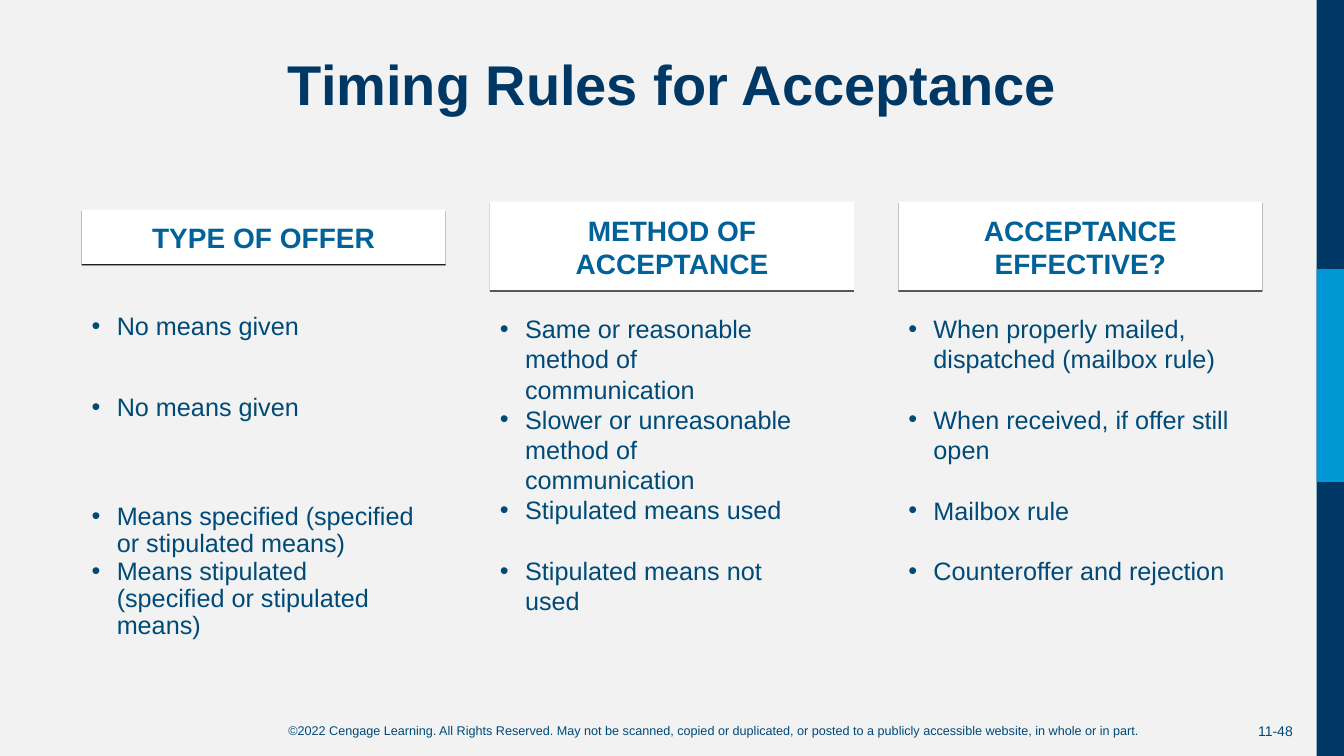
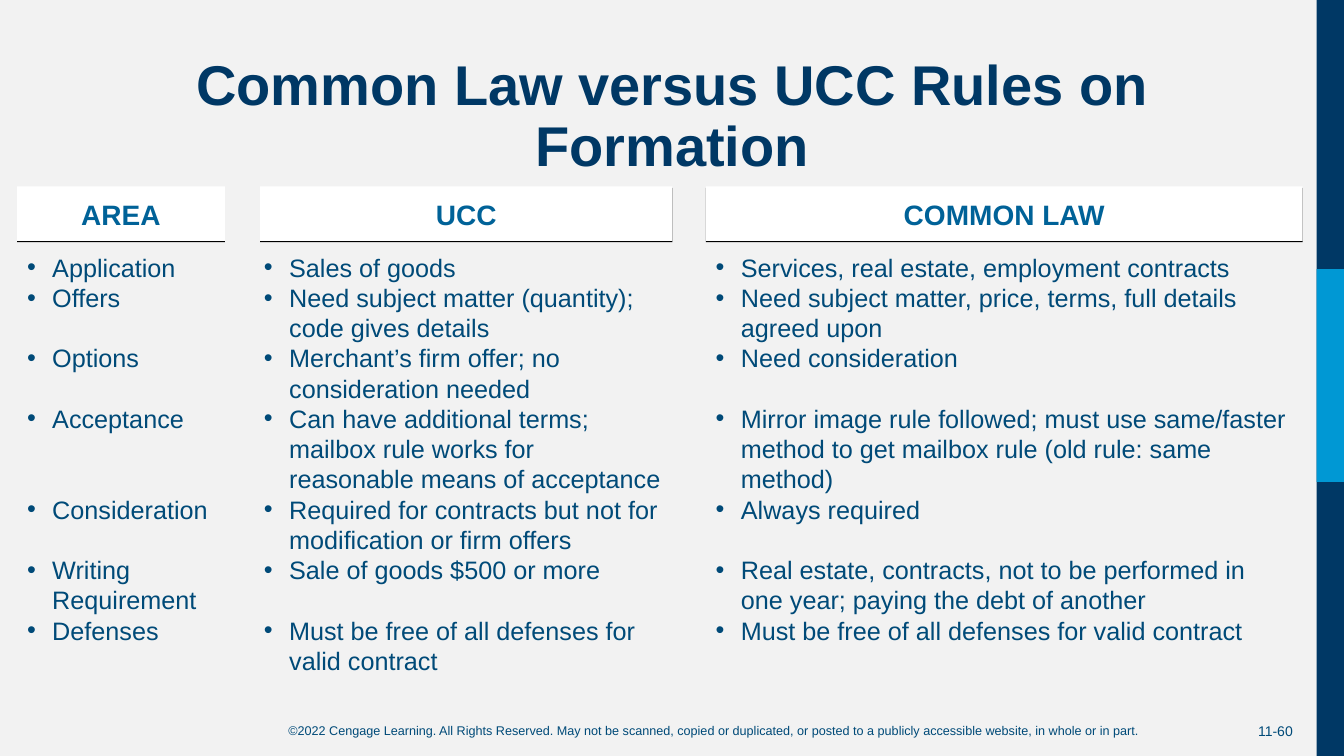
from lxml import etree
from pptx import Presentation
from pptx import util as u
from pptx.dml.color import RGBColor
from pptx.enum import shapes, text
from pptx.oxml import ns

COLORS = {
    "background": "F2F2F2",
    "title": "003865",
    "heading": "006298",
    "body": "004A78",
    "band": "003865",
    "accent": "0098D4",
    "card": "FFFFFF",
    "shadow": "000000",
}
FONT = "Arial"
LINE_HEIGHT = 21.6  # points taken by one line of 18 pt body text
COPYRIGHT = (
    "©2022 Cengage Learning. All Rights Reserved. May not be scanned, copied or "
    "duplicated, or posted to a publicly accessible website, in whole or in part."
)


def add_xml(parent, tag, **attributes):
    return etree.SubElement(parent, ns.qn(tag), attributes)


class Deck:
    def __init__(self):
        self.presentation = Presentation()
        self.presentation.slide_width = u.Inches(13.33)
        self.presentation.slide_height = u.Inches(7.5)
        self.slide = None

    # Shared frame: background, side bands, footer, title
    def new_slide(self, title, number):
        self.slide = self.presentation.slides.add_slide(self.presentation.slide_layouts[6])
        fill = self.slide.background.fill
        fill.solid()
        fill.fore_color.rgb = RGBColor.from_string(COLORS["background"])
        self.label(COPYRIGHT, (1.82, 7.12, 10.51, 0.25), 9)
        self.rectangle((13.06, 0, 0.27, 7.5), "band")
        self.rectangle((13.06, 2.67, 0.27, 2.11), "accent")
        self.label(number, (12.12, 7.05, 0.8, 0.4), 10,
                   align=text.PP_ALIGN.RIGHT, anchor=text.MSO_ANCHOR.MIDDLE)
        title_box = self.label(title, (0.52, 0.52, 12.29, 1.33), 40, "title", bold=True)
        title_box.text_frame.paragraphs[0].line_spacing = 0.9

    def rectangle(self, box, color):
        shape = self.slide.shapes.add_shape(
            shapes.MSO_SHAPE.RECTANGLE, *(u.Inches(value) for value in box))
        shape.shadow.inherit = False
        shape.fill.solid()
        shape.fill.fore_color.rgb = RGBColor.from_string(COLORS[color])
        shape.line.fill.background()
        return shape

    def set_text(self, shape, content, size, color="body", bold=False,
                 align=text.PP_ALIGN.CENTER, anchor=text.MSO_ANCHOR.TOP):
        frame = shape.text_frame
        frame.word_wrap = True
        frame.vertical_anchor = anchor
        frame.text = content
        for paragraph in frame.paragraphs:
            paragraph.alignment = align
            for run in paragraph.runs:
                run.font.name = FONT
                run.font.size = u.Pt(size)
                run.font.bold = bold
                run.font.color.rgb = RGBColor.from_string(COLORS[color])

    def label(self, content, box, size, color="body", **style):
        shape = self.slide.shapes.add_textbox(*(u.Inches(value) for value in box))
        self.set_text(shape, content, size, color, **style)
        return shape

    # White heading card with a thin hard shadow below
    def heading(self, content, box):
        shape = self.rectangle(box, "card")
        effects = shape._element.spPr.find(ns.qn("a:effectLst"))
        shadow = add_xml(effects, "a:outerShdw", blurRad="0", dist=str(u.Pt(1)),
                         dir="5400000", algn="t", rotWithShape="0")
        add_xml(shadow, "a:srgbClr", val=COLORS["shadow"])
        frame = shape.text_frame
        frame.margin_left = frame.margin_right = u.Inches(0.1)
        frame.margin_top = frame.margin_bottom = u.Inches(0.1)
        self.set_text(shape, content, 20, "heading", bold=True, anchor=text.MSO_ANCHOR.BOTTOM)

    # Bulleted list; each item is (text, lines left free above it)
    def bullets(self, items, box, spacing=1.0):
        content = "\n".join(item for item, _ in items)
        shape = self.label(content, box, 18, align=text.PP_ALIGN.LEFT)
        for paragraph, (_, free_lines) in zip(shape.text_frame.paragraphs, items):
            properties = paragraph._p.get_or_add_pPr()
            properties.set("marL", str(u.Inches(0.25)))
            properties.set("indent", str(u.Inches(-0.25)))
            bullet_color = add_xml(properties, "a:buClr")
            add_xml(bullet_color, "a:srgbClr", val=COLORS["body"])
            add_xml(properties, "a:buFont", typeface=FONT)
            add_xml(properties, "a:buChar", char="•")
            paragraph.line_spacing = spacing
            if free_lines:
                paragraph.space_before = u.Pt(round(free_lines * LINE_HEIGHT * spacing, 1))


def timing_rules(deck):
    deck.new_slide("Timing Rules for Acceptance", "11-48")
    # heading, heading top and height, list width and height, line spacing, items
    columns = [
        ("TYPE OF OFFER", 2.08, 0.54, 3.45, 3.66, 0.9, [
            ("No means given", 0),
            ("No means given", 2),
            ("Means specified (specified or stipulated means)", 3),
            ("Means stipulated (specified or stipulated means)", 0),
        ]),
        ("METHOD OF ACCEPTANCE", 2, 0.88, 3.28, 3.8, 1.0, [
            ("Same or reasonable method of communication", 0),
            ("Slower or unreasonable method of communication", 0),
            ("Stipulated means used", 0),
            ("Stipulated means not used", 1),
        ]),
        ("ACCEPTANCE EFFECTIVE?", 2, 0.88, 3.61, 3.92, 1.0, [
            ("When properly mailed, dispatched (mailbox rule)", 0),
            ("When received, if offer still open", 1),
            ("Mailbox rule", 1),
            ("Counteroffer and rejection", 1),
        ]),
    ]
    for index, (heading, top, height, width, list_height, spacing, items) in enumerate(columns):
        left = 0.81 + 4.05 * index
        deck.heading(heading, (left, top, 3.61, height))
        deck.bullets(items, (left, 3.06, width, list_height), spacing)


def formation_rules(deck):
    deck.new_slide("Common Law versus UCC Rules on Formation", "11-60")
    # heading, heading left and width, list left and width, items
    columns = [
        ("AREA", 0.17, 2.06, 0.17, 2.06, [
            ("Application", 0),
            ("Offers", 0),
            ("Options", 1),
            ("Acceptance", 1),
            ("Consideration", 2),
            ("Writing Requirement", 1),
            ("Defenses", 0),
        ]),
        ("UCC", 2.58, 4.09, 2.52, 4.14, [
            ("Sales of goods", 0),
            ("Need subject matter (quantity); code gives details", 0),
            ("Merchant’s firm offer; no consideration needed", 0),
            ("Can have additional terms; mailbox rule works for reasonable means "
             "of acceptance", 0),
            ("Required for contracts but not for modification or firm offers", 0),
            ("Sale of goods $500 or more", 0),
            ("Must be free of all defenses for valid contract", 1),
        ]),
        ("COMMON LAW", 7, 5.92, 7, 5.92, [
            ("Services, real estate, employment contracts", 0),
            ("Need subject matter, price, terms, full details agreed upon", 0),
            ("Need consideration", 0),
            ("Mirror image rule followed; must use same/faster method to get "
             "mailbox rule (old rule: same method)", 1),
            ("Always required", 0),
            ("Real estate, contracts, not to be performed in one year; paying the "
             "debt of another", 1),
            ("Must be free of all defenses for valid contract", 0),
        ]),
    ]
    for heading, left, width, list_left, list_width, items in columns:
        deck.heading(heading, (left, 1.85, width, 0.54))
        deck.bullets(items, (list_left, 2.45, list_width, 4.32))


def main():
    deck = Deck()
    timing_rules(deck)
    formation_rules(deck)
    deck.presentation.save("out.pptx")


if __name__ == "__main__":
    main()
